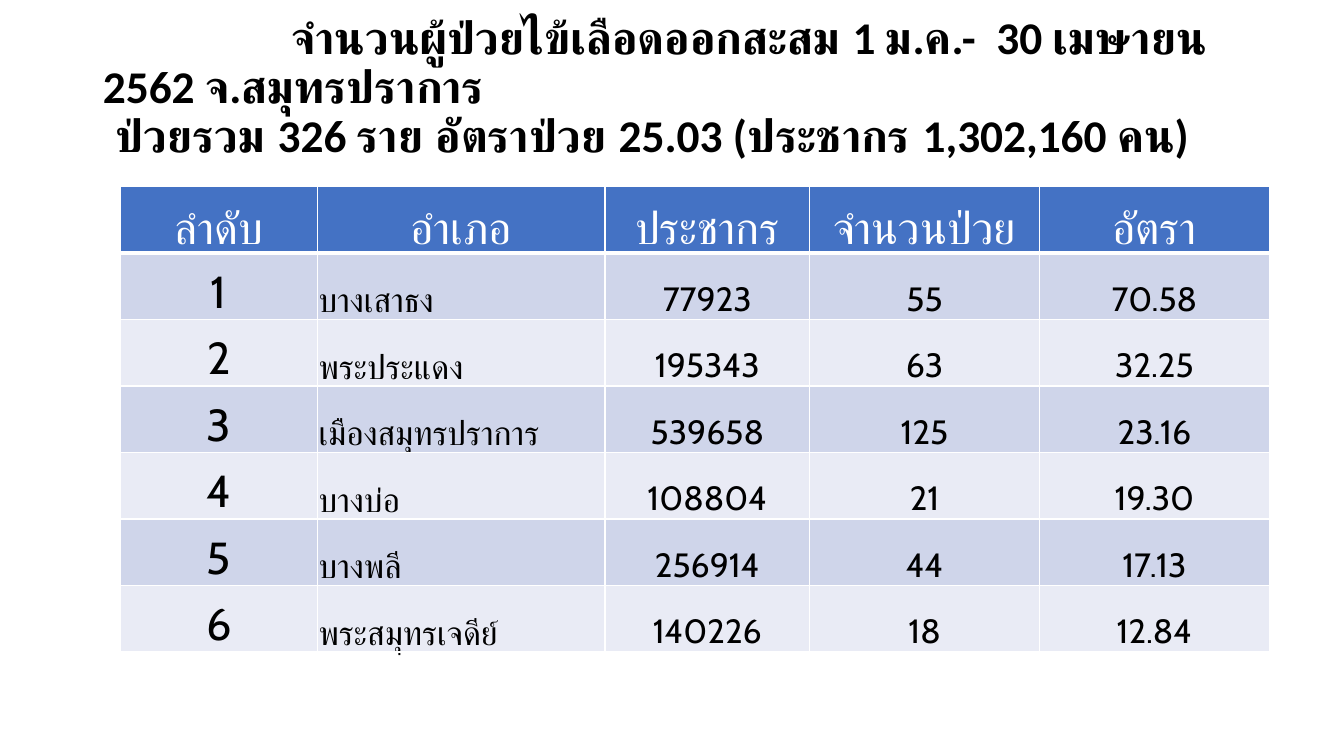
from lxml import etree
from pptx import Presentation
from pptx.dml.color import RGBColor
from pptx.enum.text import MSO_ANCHOR, MSO_AUTO_SIZE, PP_ALIGN
from pptx.oxml.ns import qn
from pptx.util import Inches, Pt

LEFT, CENTER = PP_ALIGN.LEFT, PP_ALIGN.CENTER
MIDDLE, BOTTOM = MSO_ANCHOR.MIDDLE, MSO_ANCHOR.BOTTOM
NO_FIT = MSO_AUTO_SIZE.NONE

WHITE = RGBColor(0xFF, 0xFF, 0xFF)
BLACK = RGBColor(0, 0, 0)
HEADER_BLUE = RGBColor(0x44, 0x72, 0xC4)
BANDS = (RGBColor(0xCF, 0xD5, 0xEA), RGBColor(0xE9, 0xEB, 0xF5))

TITLE_BOX = (0.92, 0.4, 11.5, 1.45)
TABLE_BOX = (1.19, 1.85, 11.4, 4.62)
TITLE_LINES = (
    "จำนวนผู้ป่วยไข้เลือดออกสะสม 1 ม.ค.-  30 เมษายน 2562 จ.สมุทรปราการ",
    " ป่วยรวม 326 ราย อัตราป่วย 25.03 (ประชากร 1,302,160 คน)",
)
COLUMN_WIDTHS = (1.96, 2.85, 2.03, 2.28, 2.28)
HEADINGS = ("ลำดับ", "อำเภอ", "ประชากร", "จำนวนป่วย", "อัตรา")
DISTRICTS = (
    ("บางเสาธง", "77923", "55", "70.58"),
    ("พระประแดง", "195343", "63", "32.25"),
    ("เมืองสมุทรปราการ", "539658", "125", "23.16"),
    ("บางบ่อ", "108804", "21", "19.30"),
    ("บางพลี", "256914", "44", "17.13"),
    ("พระสมุทรเจดีย์", "140226", "18", "12.84"),
)


def add_span(para, text, font, size, color, bold=False):
    """Append one formatted run to a paragraph."""
    span = para.add_run()
    span.text = text
    span.font.name = font
    span.font.size = Pt(size)
    span.font.bold = bold
    span.font.color.rgb = color


def set_borders(cell, widths):
    """Draw white borders on a cell, with widths in points by side."""
    properties = cell._tc.get_or_add_tcPr()
    for position, (side, width) in enumerate(widths.items()):
        line = etree.Element(qn(f"a:ln{side}"), w=str(Pt(width)))
        fill = etree.SubElement(line, qn("a:solidFill"))
        etree.SubElement(fill, qn("a:srgbClr"), val=str(WHITE))
        properties.insert(position, line)


def fill_cell(cell, text, size, color, background, align, borders):
    """Write and format one table cell."""
    cell.margin_left = cell.margin_right = cell.margin_top = Inches(0.01)
    cell.margin_bottom = 0
    cell.vertical_anchor = BOTTOM
    cell.fill.solid()
    cell.fill.fore_color.rgb = background
    para = cell.text_frame.paragraphs[0]
    para.alignment = align
    add_span(para, text, "Cabin", size, color)
    set_borders(cell, borders)


def place_title(page, box):
    """Place the heading, with its first line indented."""
    title = page.shapes.title
    title.left, title.top, title.width, title.height = map(Inches, box)
    frame = title.text_frame
    frame.word_wrap = True
    frame.auto_size = NO_FIT
    frame.vertical_anchor = MIDDLE
    frame.margin_bottom = Inches(0.54)
    para = frame.paragraphs[0]
    para.alignment = LEFT
    para.line_spacing = 0.9
    para._p.get_or_add_pPr().set("indent", str(Inches(1.87)))
    for index, text in enumerate(TITLE_LINES):
        if index:
            para.add_line_break()
        add_span(para, text, "Calibri", 32.4, BLACK, bold=True)


def place_table(page, box):
    """Place the ranked district table."""
    rows = [HEADINGS]
    rows += [(str(rank), *district) for rank, district in enumerate(DISTRICTS, 1)]
    table = page.shapes.add_table(len(rows), len(HEADINGS), *map(Inches, box)).table
    for column, width in zip(table.columns, COLUMN_WIDTHS):
        column.width = Inches(width)
    for row_index, values in enumerate(rows):
        table.rows[row_index].height = Inches(box[3] / len(rows))
        header = row_index == 0
        background = HEADER_BLUE if header else BANDS[(row_index - 1) % 2]
        borders = {"L": 1, "R": 1, "T": 3 if row_index == 1 else 1, "B": 3 if header else 1}
        for column_index, text in enumerate(values):
            size = 32 if header or column_index == 0 else 24
            align = LEFT if column_index == 1 and not header else CENTER
            fill_cell(table.cell(row_index, column_index), text, size,
                      WHITE if header else BLACK, background, align, borders)


def main():
    """Build the slide and save it."""
    deck = Presentation()
    deck.slide_width, deck.slide_height = Inches(13.33), Inches(7.5)
    page = deck.slides.add_slide(deck.slide_layouts[5])
    place_title(page, TITLE_BOX)
    place_table(page, TABLE_BOX)
    deck.save("out.pptx")


if __name__ == "__main__":
    main()
